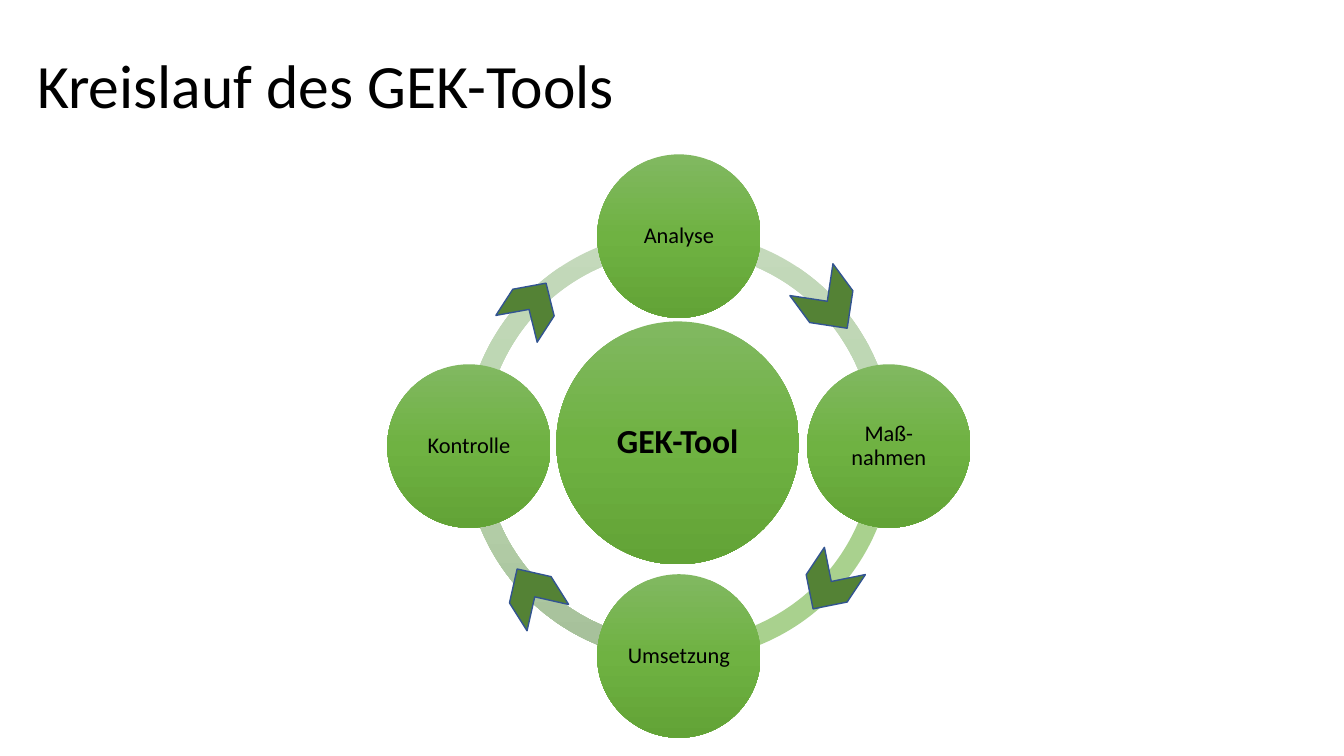
from copy import deepcopy
from dataclasses import dataclass
from math import cos, radians, sin

from pptx import Presentation
from pptx.dml.color import RGBColor
from pptx.enum.shapes import MSO_SHAPE
from pptx.enum.text import MSO_ANCHOR, PP_ALIGN
from pptx.util import Cm, Pt


@dataclass(frozen=True)
class Theme:
    """Colours and type sizes of the slide."""
    font: str = "Calibri"
    text: str = "000000"
    node: tuple = ("81B861", "6FB242", "62A336")
    ring: tuple = ("C4D9BB", "BAD5AF", "A5BF99")
    ring_accent: str = "A9D18E"
    arrow: str = "548235"
    arrow_line: str = "325491"
    title_size: int = 44
    core_size: int = 24
    node_size: int = 16


THEME = Theme()
CENTER = (17.11, 11.24)
ORBIT = 5.29
RING_DIAMETER = 10.82
NODE_DIAMETER = 4.12
STAGES = ("Analyse", "Maß-nahmen", "Umsetzung", "Kontrolle")
ARROWS = (
    (20.9, 7.66, 1.52, 1.35, 53.6, 0.5),
    (20.89, 14.74, 1.45, 1.24, 123.6, 0.5),
    (13.42, 14.95, 1.45, 1.24, 237.7, 0.5),
    (13.39, 7.71, 1.37, 1.24, 302.9, 0.47),
)


def fill_solid(shape, colour):
    """Fill a shape with one colour."""
    shape.fill.solid()
    shape.fill.fore_color.rgb = RGBColor.from_string(colour)


def fill_gradient(shape, colours):
    """Fill a shape from top to bottom with evenly spaced colours."""
    shape.fill.gradient()
    shape.fill.gradient_angle = 270
    stop_list = shape.fill._xPr.gradFill.gsLst
    while len(stop_list) < len(colours):
        stop_list.append(deepcopy(stop_list[-1]))
    for index, (stop, colour) in enumerate(zip(shape.fill.gradient_stops, colours)):
        stop.color.rgb = RGBColor.from_string(colour)
        stop.position = index / (len(colours) - 1)


def add_centered_shape(slide, kind, x, y, width, height):
    """Add a shape around a centre point, without shadow or line."""
    shape = slide.shapes.add_shape(
        kind, Cm(x - width / 2), Cm(y - height / 2), Cm(width), Cm(height))
    shape.shadow.inherit = False
    shape.line.fill.background()
    return shape


def set_text(shape, text, size, align, bold=False):
    """Write one paragraph, vertically centred, into a shape."""
    frame = shape.text_frame
    frame.word_wrap = True
    frame.vertical_anchor = MSO_ANCHOR.MIDDLE
    paragraph = frame.paragraphs[0]
    paragraph.text = text
    paragraph.alignment = align
    paragraph.line_spacing = 0.9
    paragraph.font.name = THEME.font
    paragraph.font.size = Pt(size)
    paragraph.font.bold = bold
    paragraph.font.color.rgb = RGBColor.from_string(THEME.text)


def add_title(slide, text):
    """Add the slide title."""
    title = slide.shapes.add_textbox(Cm(0.69), Cm(0.38), Cm(29.21), Cm(3.68))
    set_text(title, text, THEME.title_size, PP_ALIGN.LEFT)


def add_ring_quarter(slide, start):
    """Add the quarter of the ring that begins at an angle in degrees."""
    arc = add_centered_shape(
        slide, MSO_SHAPE.BLOCK_ARC, *CENTER, RING_DIAMETER, RING_DIAMETER)
    end = (start + 90) % 360
    for index, value in enumerate((start * 0.6, end * 0.6, 0.046)):
        arc.adjustments[index] = value
    if start == 0:
        fill_solid(arc, THEME.ring_accent)
    else:
        fill_gradient(arc, THEME.ring)


def add_circle(slide, text, x, y, diameter, size, bold=False):
    """Add a labelled circle."""
    circle = add_centered_shape(slide, MSO_SHAPE.OVAL, x, y, diameter, diameter)
    fill_gradient(circle, THEME.node)
    frame = circle.text_frame
    frame.margin_left = frame.margin_right = Cm(0.05)
    frame.margin_top = frame.margin_bottom = Cm(0.05)
    set_text(circle, text, size, PP_ALIGN.CENTER, bold)


def add_arrow(slide, x, y, width, height, rotation, notch):
    """Add a chevron that shows the direction of the cycle."""
    arrow = add_centered_shape(slide, MSO_SHAPE.CHEVRON, x, y, width, height)
    arrow.adjustments[0] = notch
    arrow.rotation = rotation
    fill_solid(arrow, THEME.arrow)
    arrow.line.color.rgb = RGBColor.from_string(THEME.arrow_line)
    arrow.line.width = Pt(1)


def main():
    """Build and save the slide."""
    presentation = Presentation()
    presentation.slide_width = Cm(33.87)
    presentation.slide_height = Cm(19.05)
    slide = presentation.slides.add_slide(presentation.slide_layouts[6])
    add_title(slide, "Kreislauf des GEK-Tools")
    for start in (180, 90, 0, 270):
        add_ring_quarter(slide, start)
    add_circle(slide, "GEK-Tool", 17.08, 11.16, 6.12, THEME.core_size, bold=True)
    for index, stage in enumerate(STAGES):
        angle = radians(index * 90 - 90)
        x = CENTER[0] + ORBIT * cos(angle)
        y = CENTER[1] + ORBIT * sin(angle)
        add_circle(slide, stage, x, y, NODE_DIAMETER, THEME.node_size)
    for arrow in ARROWS:
        add_arrow(slide, *arrow)
    presentation.save("out.pptx")


if __name__ == "__main__":
    main()
